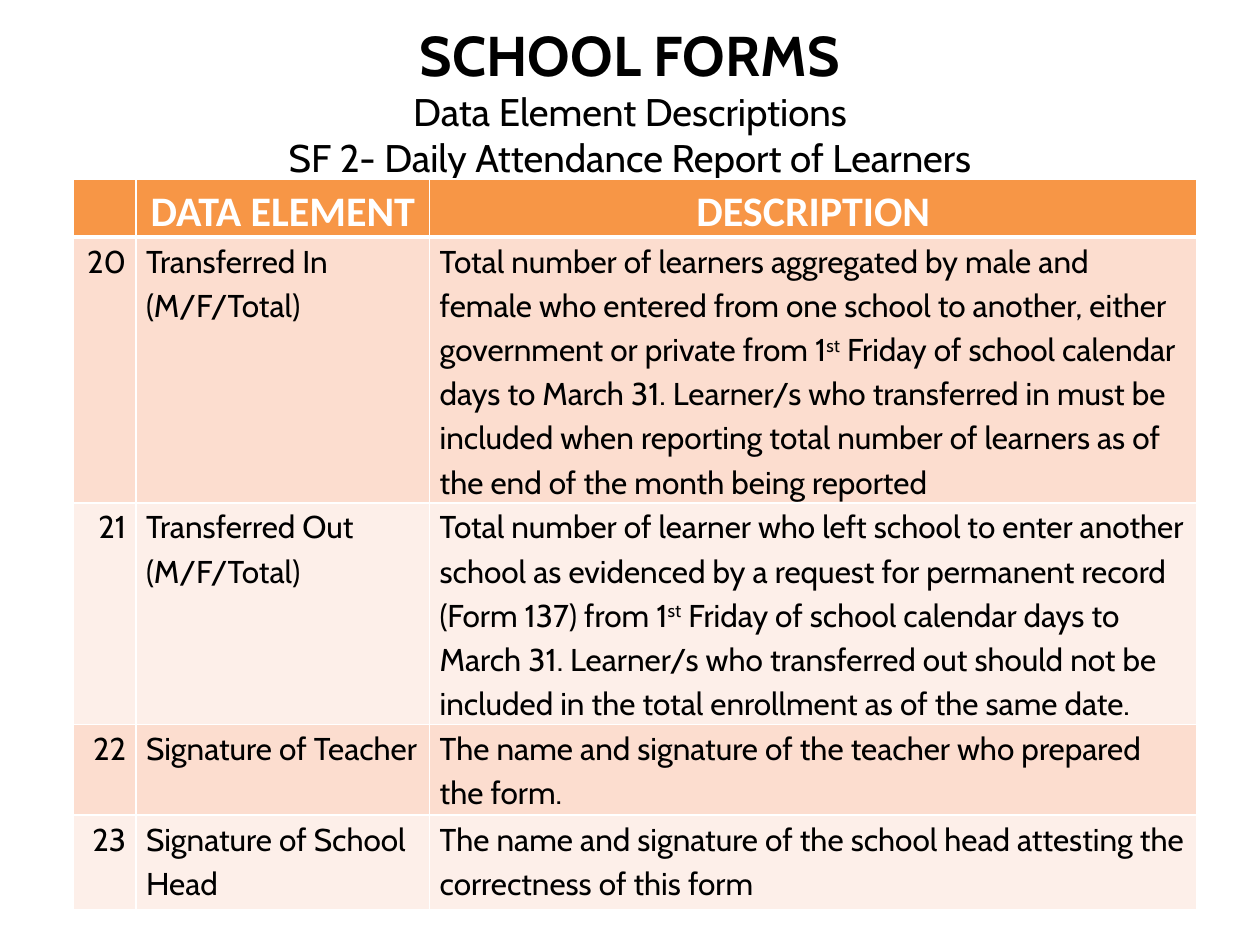
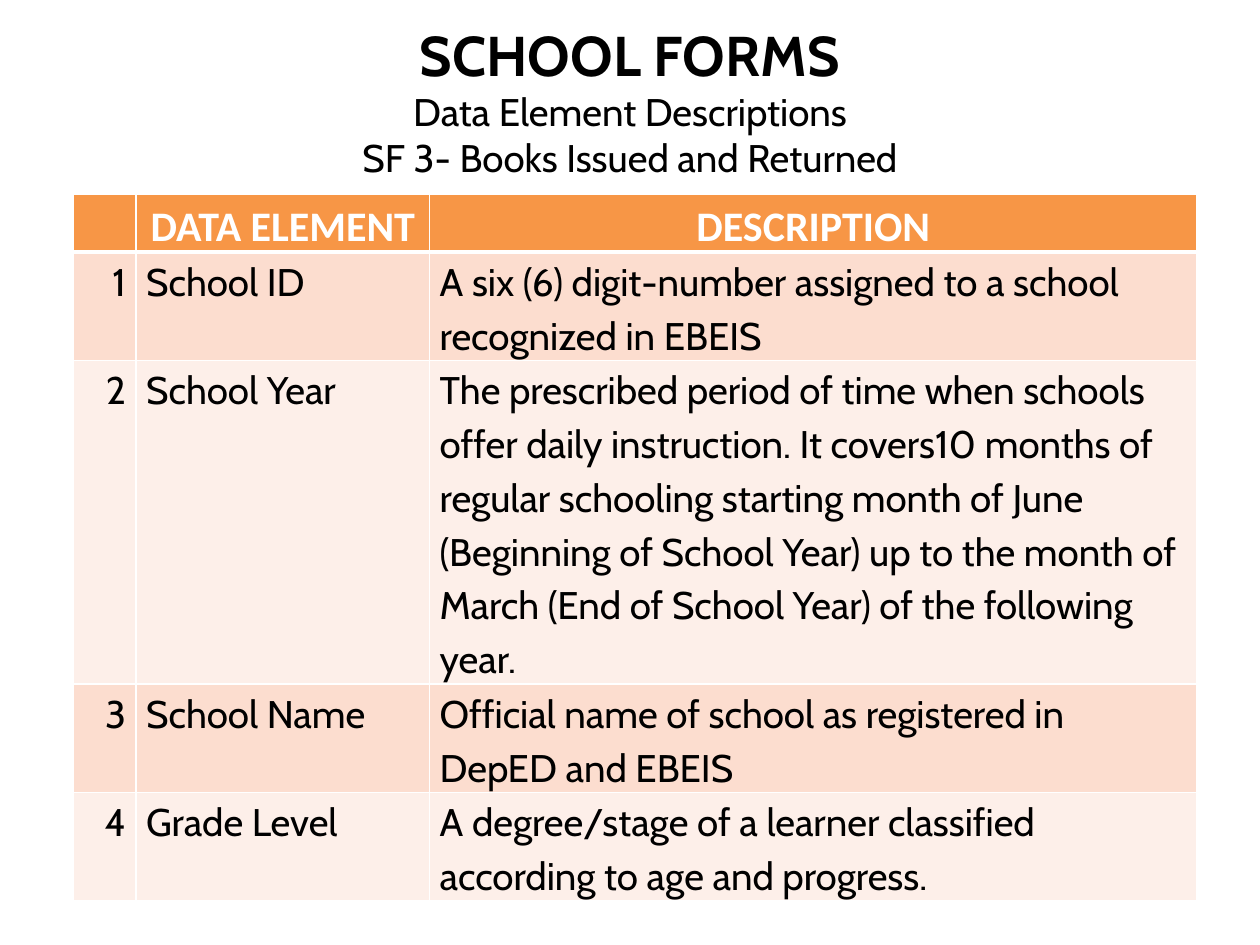
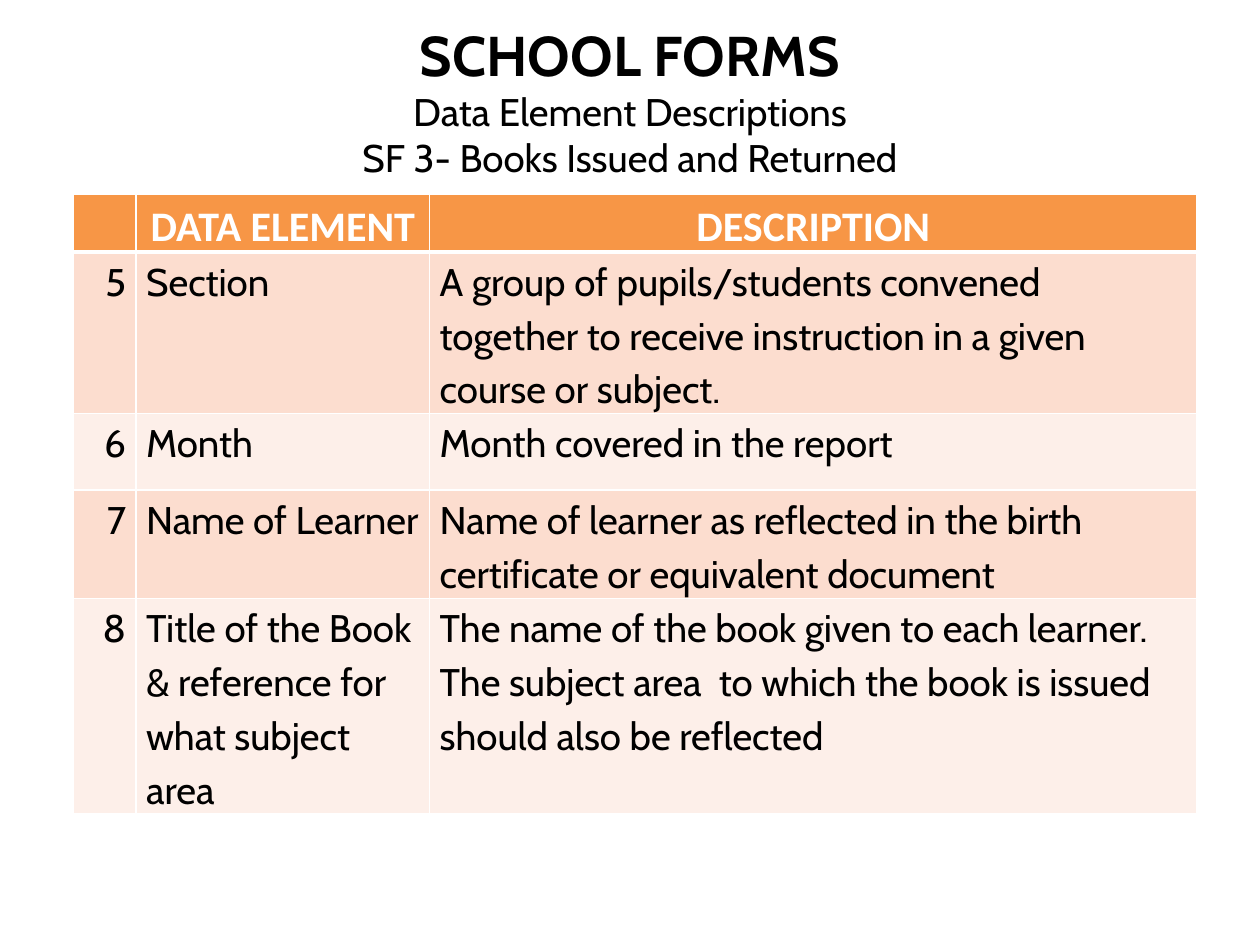
from dataclasses import dataclass

from lxml.etree import SubElement
from pptx import Presentation
from pptx.dml.color import RGBColor
from pptx.enum.text import MSO_ANCHOR, PP_ALIGN
from pptx.oxml.ns import qn
from pptx.util import Inches, Pt


@dataclass(frozen=True)
class Theme:
    text: str = "000000"
    light: str = "FFFFFF"
    header: str = "F79646"
    bands: tuple = ("FCDDCF", "FDEFE9")
    body_font: str = "Cabin"
    header_font: str = "Calibri"
    title_size: int = 32
    subtitle_size: int = 22
    header_size: int = 24
    border: int = 1
    header_border: int = 3
    line_spacing: float = 1.15


THEME = Theme()
HEADINGS = ("", "DATA ELEMENT", "DESCRIPTION")
COLUMN_WIDTHS = (0.5, 2.33, 6.09)
COLUMN_ALIGNS = (PP_ALIGN.RIGHT, PP_ALIGN.LEFT, PP_ALIGN.LEFT)

# Carets enclose superscript text; heights leave room for every wrapped line
FORMS = [
    {
        "form": "SF 2- Daily Attendance Report of Learners",
        "top": 1.42,
        "size": 18,
        "heights": (0.46, 2.11, 1.76, 0.72, 0.75),
        "rows": [
            ("20", "Transferred In (M/F/Total)",
             "Total number of learners aggregated by male and female who entered from one "
             "school to another, either government or private from 1^st^ Friday of school "
             "calendar days to March 31. Learner/s who transferred in must be included when "
             "reporting total number of learners as of the end of the month being reported"),
            ("21", "Transferred Out (M/F/Total)",
             "Total number of learner who left school to enter another school as evidenced "
             "by a request for permanent record (Form 137) from 1^st^ Friday of school "
             "calendar days to March 31. Learner/s who transferred out should not be "
             "included in the total enrollment as of the same date."),
            ("22", "Signature of Teacher",
             "The name and signature of the teacher who prepared the form."),
            ("23", "Signature of School Head",
             "The name and signature of the school head attesting the correctness of "
             "this form"),
        ],
    },
    {
        "form": "SF 3- Books Issued and Returned",
        "top": 1.54,
        "size": 22,
        "heights": (0.46, 0.86, 2.57, 0.86, 0.86),
        "rows": [
            ("1", "School ID",
             "A six (6) digit-number assigned to a school recognized in EBEIS"),
            ("2", "School Year",
             "The prescribed period of time when schools offer daily instruction. It "
             "covers10 months of regular schooling starting month of June (Beginning of "
             "School Year) up to the month of March (End of School Year) of the following "
             "year."),
            ("3", "School Name",
             "Official name of school as registered in DepED and EBEIS"),
            ("4", "Grade Level",
             "A degree/stage of a learner classified according to age and progress."),
        ],
    },
    {
        "form": "SF 3- Books Issued and Returned",
        "top": 1.54,
        "size": 22,
        "heights": (0.46, 1.28, 0.61, 0.86, 1.71),
        "rows": [
            ("5", "Section",
             "A group of pupils/students convened together to receive instruction in a "
             "given course or subject."),
            ("6", "Month", "Month covered in the report"),
            ("7", "Name of Learner",
             "Name of learner as reflected in the birth certificate or equivalent document"),
            ("8", "Title of the Book & reference for what subject area",
             "The name of the book given to each learner. The subject area  to which the "
             "book is issued should also be reflected"),
        ],
    },
]


def add_text(para, text, *, size, font=THEME.body_font, color=THEME.text, bold=False):
    """Add formatted text; parts between carets become superscript."""
    for index, part in enumerate(text.split("^")):
        span = para.add_run()
        span.text = part
        span.font.size = Pt(size)
        span.font.name = font
        span.font.bold = bold
        span.font.color.rgb = RGBColor.from_string(color)
        if index % 2:
            span.font._element.set("baseline", "30000")


def add_title(page, form):
    box = page.shapes.add_textbox(Inches(0.5), Inches(0.17), Inches(9), Inches(1.25))
    frame = box.text_frame
    frame.word_wrap = True
    frame.vertical_anchor = MSO_ANCHOR.MIDDLE
    para = frame.paragraphs[0]
    para.alignment = PP_ALIGN.CENTER
    add_text(para, "SCHOOL FORMS", size=THEME.title_size, bold=True)
    for line in ("Data Element Descriptions", form):
        para.add_line_break()
        add_text(para, line, size=THEME.subtitle_size)


def set_borders(cell, top, bottom):
    properties = cell._tc.get_or_add_tcPr()
    widths = {"a:lnL": THEME.border, "a:lnR": THEME.border, "a:lnT": top, "a:lnB": bottom}
    for tag, width in widths.items():
        line = SubElement(properties, qn(tag), w=str(Pt(width)))
        fill = SubElement(line, qn("a:solidFill"))
        SubElement(fill, qn("a:srgbClr"), val=THEME.light)


def fill_cell(cell, text, *, fill, align, top=THEME.border, bottom=THEME.border, **style):
    set_borders(cell, top, bottom)
    cell.fill.solid()
    cell.fill.fore_color.rgb = RGBColor.from_string(fill)
    cell.margin_left = cell.margin_right = Inches(0.08)
    cell.margin_top = cell.margin_bottom = 0
    para = cell.text_frame.paragraphs[0]
    para.alignment = align
    para.line_spacing = THEME.line_spacing
    if text:
        add_text(para, text, **style)


def add_element_table(page, rows, *, top, size, heights):
    table = page.shapes.add_table(
        len(heights), len(COLUMN_WIDTHS), Inches(0.58), Inches(top),
        Inches(sum(COLUMN_WIDTHS)), Inches(sum(heights))).table
    table.first_row = table.horz_banding = False
    for column, width in zip(table.columns, COLUMN_WIDTHS):
        column.width = Inches(width)
    for row, height in zip(table.rows, heights):
        row.height = Inches(height)

    # Header row
    for column, heading in enumerate(HEADINGS):
        fill_cell(table.cell(0, column), heading, fill=THEME.header,
                  align=PP_ALIGN.CENTER, bottom=THEME.header_border,
                  size=THEME.header_size, font=THEME.header_font,
                  color=THEME.light, bold=True)

    # Banded body rows
    for number, values in enumerate(rows, start=1):
        for column, value in enumerate(values):
            fill_cell(table.cell(number, column), value,
                      fill=THEME.bands[(number - 1) % 2], align=COLUMN_ALIGNS[column],
                      top=THEME.header_border if number == 1 else THEME.border, size=size)


def main():
    deck = Presentation()
    deck.slide_width, deck.slide_height = Inches(10), Inches(7.5)
    blank = deck.slide_layouts[6]
    for form in FORMS:
        page = deck.slides.add_slide(blank)
        add_title(page, form["form"])
        add_element_table(page, form["rows"], top=form["top"], size=form["size"],
                          heights=form["heights"])
    deck.save("out.pptx")


if __name__ == "__main__":
    main()
